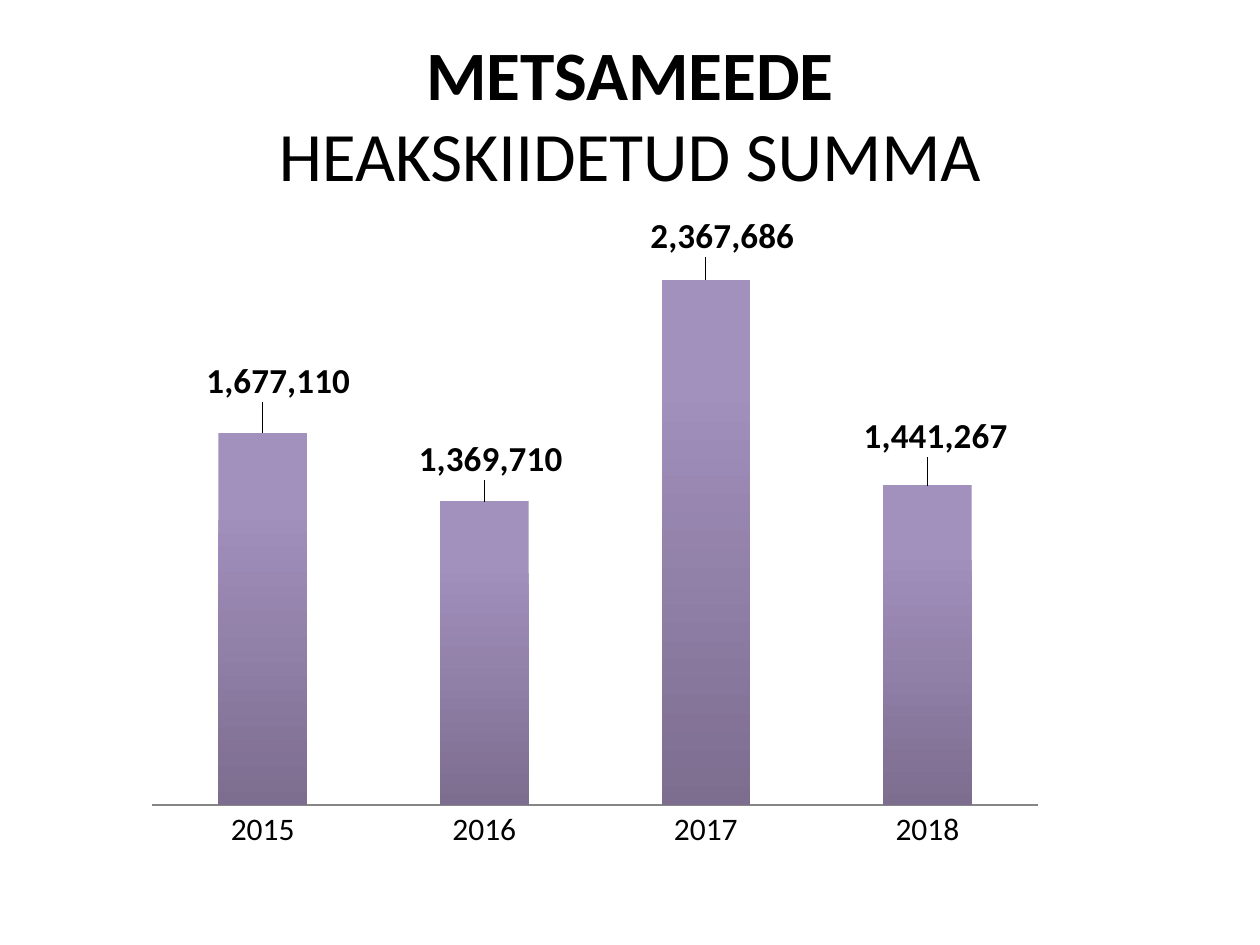
from lxml.etree import SubElement
from pptx import Presentation
from pptx.chart.data import CategoryChartData
from pptx.dml.color import RGBColor
from pptx.enum.chart import XL_CHART_TYPE, XL_LABEL_POSITION, XL_TICK_MARK
from pptx.enum.text import MSO_ANCHOR, MSO_AUTO_SIZE, PP_ALIGN
from pptx.oxml.ns import qn
from pptx.util import Pt

AMOUNTS = {"2015": 1677110, "2016": 1369710, "2017": 2367686, "2018": 1441267}
LABEL_SHIFTS = [(0.017, -0.04), (0.007, -0.025), (0.018, -0.027), (0.009, -0.036)]
PLOT_LAYOUT = {"layoutTarget": "inner", "xMode": "edge", "yMode": "edge",
               "x": 0.02, "y": 0.054, "w": 0.961, "h": 0.862}
BAR_GRADIENT = [(0.2, "A290BD"), (1, "7D6D8F")]


def color(value):
    return RGBColor.from_string(value)


def format_font(font, **formats):
    font.color.rgb = color("000000")
    for name, value in {"name": "Calibri", **formats}.items():
        setattr(font, name, value)


def set_layout(parent, position, values):
    for old in parent.findall(qn("c:layout")):
        parent.remove(old)
    layout = SubElement(parent, qn("c:layout"))
    parent.insert(position, layout)
    manual = SubElement(layout, qn("c:manualLayout"))
    for name, value in values.items():
        SubElement(manual, qn(f"c:{name}")).set("val", str(value))


def place_title(page, left, top, width, height):
    title = page.shapes.title
    title.left, title.top, title.width, title.height = map(Pt, (left, top, width, height))
    frame = title.text_frame
    frame.auto_size = MSO_AUTO_SIZE.NONE
    frame.vertical_anchor = MSO_ANCHOR.MIDDLE
    para = frame.paragraphs[0]
    para.alignment = PP_ALIGN.CENTER
    para.line_spacing = 0.98
    for index, (text, bold) in enumerate([("METSAMEEDE", True), ("HEAKSKIIDETUD SUMMA", False)]):
        if index:
            para.add_line_break()
        span = para.add_run()
        span.text = text
        format_font(span.font, size=Pt(39.6), bold=bold)


def format_axes(chart):
    years, amounts = chart.category_axis, chart.value_axis
    years.major_tick_mark = years.minor_tick_mark = XL_TICK_MARK.NONE
    years.format.line.color.rgb = color("868686")
    years.format.line.width = Pt(0.75)
    amounts.minimum_scale, amounts.maximum_scale = 0, 2500000
    amounts.has_major_gridlines = False
    amounts.visible = False


def format_bars(plot):
    plot.gap_width = 150
    plot.vary_by_categories = False
    series = plot.series[0]
    fill = series.format.fill
    fill.gradient()
    fill.gradient_angle = 270
    for stop, (position, shade) in zip(fill.gradient_stops, BAR_GRADIENT):
        stop.position = position
        stop.color.rgb = color(shade)
    labels = series.data_labels
    labels.show_value = True
    labels.number_format = "#,##0"
    labels.number_format_is_linked = False
    format_font(labels.font, size=Pt(20), bold=True)
    for index, (x, y) in enumerate(LABEL_SHIFTS):
        label = series.points[index].data_label
        label.position = XL_LABEL_POSITION.OUTSIDE_END
        format_font(label.font, size=Pt(20), bold=True)
    for element, (x, y) in zip(plot.chart_labels if hasattr(plot, "chart_labels") else
                               labels._element.findall(qn("c:dLbl")), LABEL_SHIFTS):
        set_layout(element, 1, {"x": x, "y": y})


def place_chart(page, left, top, width, height):
    data = CategoryChartData(number_format="#,##0")
    data.categories = list(AMOUNTS)
    data.add_series("Series 1", list(AMOUNTS.values()))
    box = page.shapes.add_chart(XL_CHART_TYPE.COLUMN_CLUSTERED,
                                *map(Pt, (left, top, width, height)), data)
    chart = box.chart
    chart.has_title = chart.has_legend = False
    format_font(chart.font, size=Pt(18))
    format_axes(chart)
    format_bars(chart.plots[0])
    plot_area = chart.element.find(f".//{qn('c:plotArea')}") if hasattr(chart, "element") \
        else chart._chartSpace.find(f".//{qn('c:plotArea')}")
    set_layout(plot_area, 0, PLOT_LAYOUT)


def main():
    deck = Presentation()
    deck.slide_width, deck.slide_height = Pt(720), Pt(540)
    page = deck.slides.add_slide(deck.slide_layouts[5])
    place_title(page, 36, 21.6, 648, 90)
    place_chart(page, 76.32, 122.4, 527.04, 368.64)
    deck.save("out.pptx")


if __name__ == "__main__":
    main()
